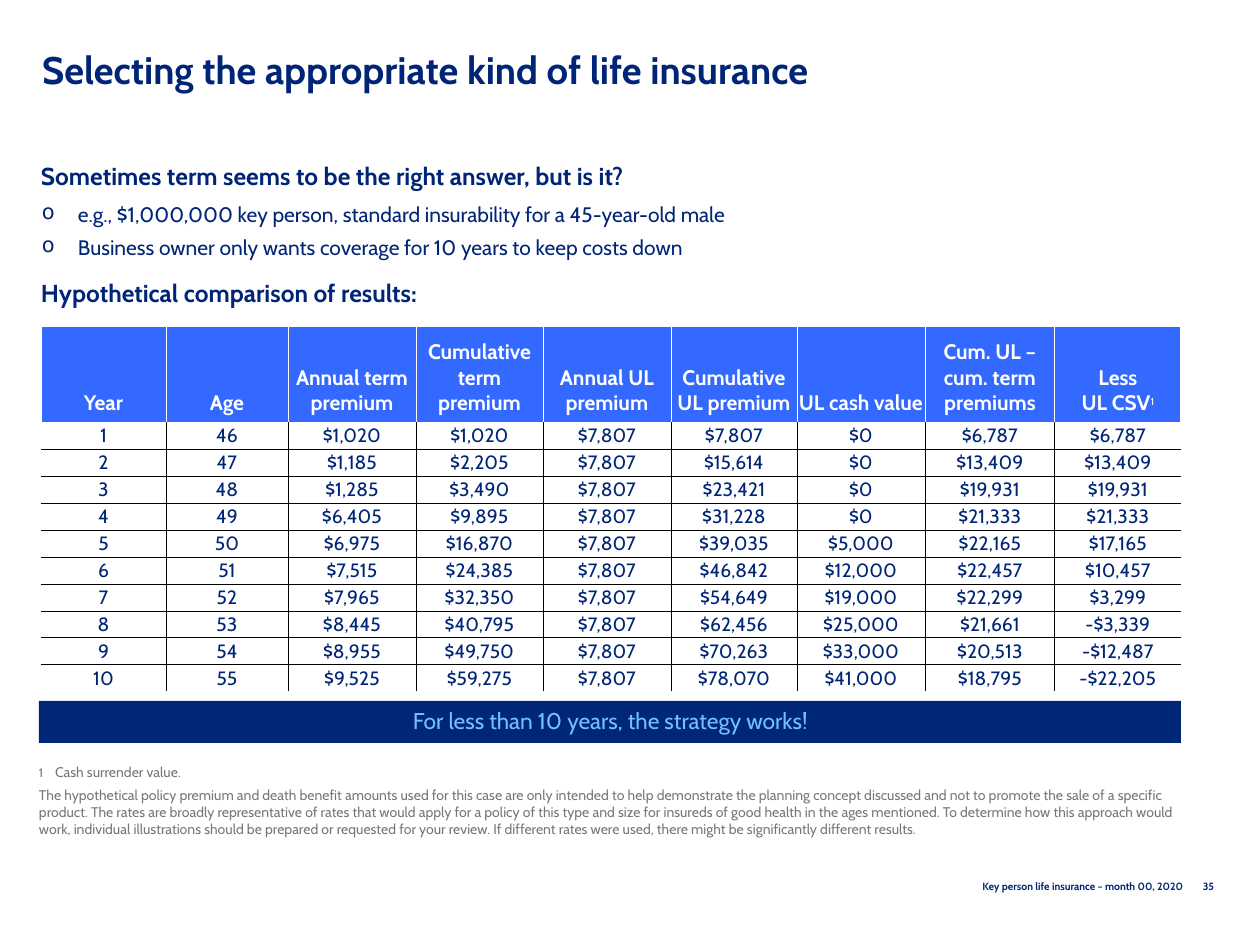
from lxml.etree import SubElement
from pptx import Presentation
from pptx.dml.color import RGBColor
from pptx.enum.shapes import MSO_SHAPE as Shape
from pptx.enum.text import MSO_ANCHOR as Anchor, PP_ALIGN as Align
from pptx.oxml import parse_xml
from pptx.oxml.ns import nsdecls, qn
from pptx.util import Emu, Pt

PX_PER_INCH = 126
FONT = "Cabin"
COLORS = {
    "navy": "002577", "banner": "002677", "header": "3369FF", "sky": "73C0FF",
    "gray": "75787B", "white": "FFFFFF", "black": "000000",
}

COLUMN_WIDTHS = [125, 122, 128, 127, 128, 126, 128, 130, 126]
HEADER_HEIGHT, ROW_HEIGHT = 96, 27
HEADINGS = [
    "Year", "Age", "Annual term premium", "Cumulative term premium",
    "Annual UL premium", "Cumulative UL premium", "UL cash value",
    "Cum. UL – cum. term premiums", "Less\vUL CSV",
]
# Annual term, cumulative term, cumulative UL, cash value, UL less term, less CSV
RESULTS = [
    (1020, 1020, 7807, 0, 6787, 6787),
    (1185, 2205, 15614, 0, 13409, 13409),
    (1285, 3490, 23421, 0, 19931, 19931),
    (6405, 9895, 31228, 0, 21333, 21333),
    (6975, 16870, 39035, 5000, 22165, 17165),
    (7515, 24385, 46842, 12000, 22457, 10457),
    (7965, 32350, 54649, 19000, 22299, 3299),
    (8445, 40795, 62456, 25000, 21661, -3339),
    (8955, 49750, 70263, 33000, 20513, -12487),
    (9525, 59275, 78070, 41000, 18795, -22205),
]
ANNUAL_UL = 7807
START_AGE = 45

DISCLAIMER = (
    "The hypothetical policy premium and death benefit amounts used for this case are only "
    "intended to help demonstrate the planning concept discussed and not to promote the sale "
    "of a specific product. The rates are broadly representative of rates that would apply for "
    "a policy of this type and size for insureds of good health in the ages mentioned. To "
    "determine how this approach would work, individual illustrations should be prepared or "
    "requested for your review. If different rates were used, there might be significantly "
    "different results."
)


def px(length):
    return Emu(round(length * 914400 / PX_PER_INCH))


def rgb(name):
    return RGBColor.from_string(COLORS[name])


def set_all(target, values):
    for name, value in values.items():
        setattr(target, name, value)


def style(text, size, color="navy", bold=False):
    set_all(text.font, {"name": FONT, "size": Pt(size), "bold": bold})
    text.font.color.rgb = rgb(color)


def set_frame(frame, anchor=Anchor.TOP, insets=(13, 6, 13, 6)):
    sides = ("margin_left", "margin_top", "margin_right", "margin_bottom")
    set_all(frame, {"word_wrap": True, "vertical_anchor": anchor})
    set_all(frame, dict(zip(sides, map(px, insets))))


def add_text_box(slide, box, **frame_format):
    frame = slide.shapes.add_textbox(*map(px, box)).text_frame
    set_frame(frame, **frame_format)
    return frame


def hang(paragraph, indent, hanging):
    properties = paragraph._p.get_or_add_pPr()
    properties.set("marL", str(px(indent)))
    properties.set("indent", str(-px(hanging)))
    return properties


def add_title(slide, box):
    title = slide.shapes.title
    set_all(title, dict(zip(("left", "top", "width", "height"), map(px, box))))
    frame = title.text_frame
    frame.text = "Selecting the appropriate kind of life insurance"
    set_frame(frame)
    heading = frame.paragraphs[0]
    set_all(heading, {"alignment": Align.LEFT, "line_spacing": Pt(18.8)})
    style(heading, 21.9, bold=True)


def add_introduction(slide, box):
    frame = add_text_box(slide, box, insets=(0, 6, 13, 6))
    # Text, size, bold, bulleted, space before, line spacing
    lines = [
        ("Sometimes term seems to be the right answer, but is it?", 14, True, False, 0, 0.9),
        ("e.g., $1,000,000 key person, standard insurability for a 45-year-old male",
         12, False, True, 8, 0.9),
        ("Business owner only wants coverage for 10 years to keep costs down",
         12, False, True, 6, 0.9),
        ("Hypothetical comparison of results:", 14, True, False, 10, 1.0),
    ]
    for i, (text, size, bold, bulleted, before, spacing) in enumerate(lines):
        line = frame.add_paragraph() if i else frame.paragraphs[0]
        line.text = text
        set_all(line, {"space_before": Pt(before), "line_spacing": spacing})
        if bulleted:
            properties = hang(line, 37, 36)
            bullet_color = SubElement(properties, qn("a:buClr"))
            SubElement(bullet_color, qn("a:srgbClr")).set("val", COLORS["navy"])
            SubElement(properties, qn("a:buChar")).set("char", "o")
        style(line, size, bold=bold)


def set_borders(cell, edge_colors):
    properties = cell._tc.get_or_add_tcPr()
    for i, (edge, color) in enumerate(edge_colors.items()):
        properties.insert(i, parse_xml(
            f'<a:ln{edge} {nsdecls("a")} w="6350"><a:solidFill>'
            f'<a:srgbClr val="{COLORS[color]}"/></a:solidFill></a:ln{edge}>'))


def dollars(amount):
    return f"{'-' if amount < 0 else ''}${abs(amount):,}"


def table_rows():
    yield HEADINGS
    for year, (term, cum_term, *others) in enumerate(RESULTS, start=1):
        amounts = (term, cum_term, ANNUAL_UL, *others)
        yield [str(year), str(START_AGE + year), *map(dollars, amounts)]


def add_comparison(slide, left, top):
    rows = list(table_rows())
    heights = [HEADER_HEIGHT] + [ROW_HEIGHT] * len(RESULTS)
    box = (left, top, sum(COLUMN_WIDTHS), sum(heights))
    table = slide.shapes.add_table(len(rows), len(HEADINGS), *map(px, box)).table
    set_all(table, {"first_row": False, "horz_banding": False})
    for column, width in zip(table.columns, COLUMN_WIDTHS):
        column.width = px(width)
    for row, height in zip(table.rows, heights):
        row.height = px(height)

    last_row, last_column = len(rows) - 1, len(HEADINGS) - 1
    for r, row in enumerate(rows):
        header = r == 0
        insets = (1, 13, 1, 6) if header else (1, 0, 1, 0)
        for c, text in enumerate(row):
            cell = table.cell(r, c)
            set_all(cell, dict(zip(
                ("margin_left", "margin_top", "margin_right", "margin_bottom"),
                map(px, insets))))
            cell.vertical_anchor = Anchor.BOTTOM if header else Anchor.MIDDLE
            entry = cell.text_frame.paragraphs[0]
            entry.text = text
            entry.alignment = Align.CENTER
            if header:
                style(entry, 12, "white", bold=True)
                cell.fill.solid()
                cell.fill.fore_color.rgb = rgb("header")
            else:
                style(entry, 11)
                cell.fill.background()
            # Only lines between body cells are black
            white_edges = {"L": header or c == 0, "R": header or c == last_column,
                           "T": r <= 1, "B": header or r == last_row}
            set_borders(cell, {edge: "white" if white else "black"
                               for edge, white in white_edges.items()})

    # Footnote mark in the last heading
    mark = table.cell(0, last_column).text_frame.paragraphs[0].add_run()
    mark.text = "1"
    style(mark, 10, "white")
    mark.font._element.set("baseline", "30000")


def add_banner(slide, box):
    banner = slide.shapes.add_shape(Shape.RECTANGLE, *map(px, box))
    banner.shadow.inherit = False
    banner.fill.solid()
    banner.fill.fore_color.rgb = rgb("banner")
    banner.line.fill.background()
    set_frame(banner.text_frame, Anchor.MIDDLE, (0, 0, 0, 0))
    message = banner.text_frame.paragraphs[0]
    message.text = "For less than 10 years, the strategy works!"
    set_all(message, {"alignment": Align.CENTER, "line_spacing": 0.9})
    style(message, 13, "sky")


def add_footnotes(slide, box):
    frame = add_text_box(slide, box, anchor=Anchor.BOTTOM, insets=(0, 0, 0, 0))
    note = frame.paragraphs[0]
    hang(note, 16, 16)
    for text, size in (("1\t", 7), ("Cash surrender value.", 8)):
        run = note.add_run()
        run.text = text
        style(run, size, "gray")
    disclaimer = frame.add_paragraph()
    disclaimer.text = DISCLAIMER
    disclaimer.space_before = Pt(3.5)
    style(disclaimer, 8, "gray")


def add_footer(slide, top):
    parts = [
        ("Key person life insurance – month 00, 2020", 770, 426, 25, Anchor.MIDDLE, "banner"),
        ("35", 1184, 43, 19, Anchor.TOP, "navy"),
    ]
    for text, left, width, height, anchor, color in parts:
        frame = add_text_box(slide, (left, top, width, height), anchor=anchor)
        label = frame.paragraphs[0]
        label.text = text
        label.alignment = Align.RIGHT
        style(label, 6, color, bold=True)


def main():
    deck = Presentation()
    set_all(deck, {"slide_width": px(1260), "slide_height": px(945)})
    slide = deck.slides.add_slide(deck.slide_layouts[5])
    add_title(slide, (29, 53, 1191, 103))
    add_introduction(slide, (41, 158, 1131, 160))
    add_comparison(slide, 41, 326)
    add_banner(slide, (39, 701, 1142, 42))
    add_footnotes(slide, (39, 760, 1142, 77))
    add_footer(slide, 874)
    deck.save("out.pptx")


if __name__ == "__main__":
    main()
